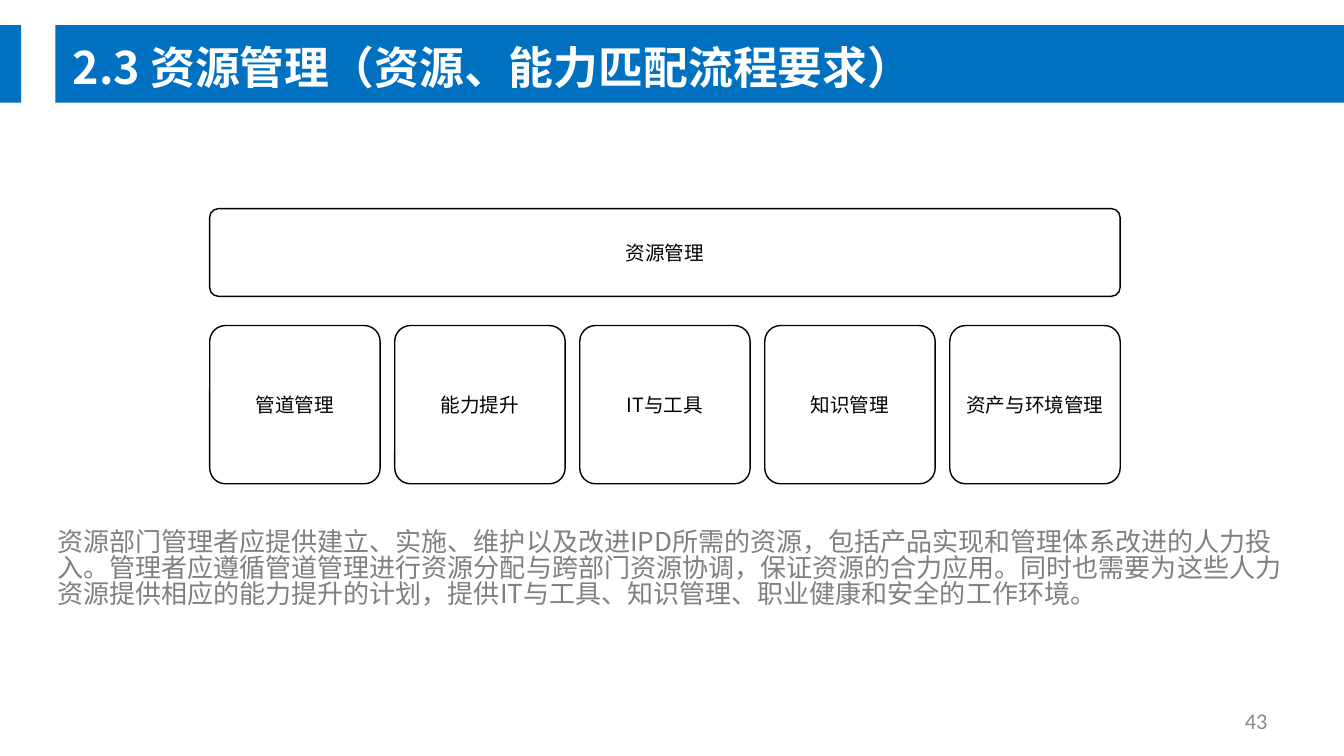
from dataclasses import dataclass

from lxml.etree import SubElement
from pptx import Presentation
from pptx.dml.color import RGBColor
from pptx.enum.shapes import MSO_SHAPE as Shape
from pptx.enum.text import MSO_ANCHOR as Anchor, MSO_AUTO_SIZE as AutoSize, PP_ALIGN as Align
from pptx.oxml.ns import qn
from pptx.util import Inches, Pt

TITLE = "2.3 资源管理（资源、能力匹配流程要求）"
MAIN_AREA = "资源管理"
SUB_AREAS = ["管道管理", "能力提升", "IT与工具", "知识管理", "资产与环境管理"]
DESCRIPTION = (
    "资源部门管理者应提供建立、实施、维护以及改进IPD所需的资源，包括产品实现和管理体系改进的人力投入。"
    "管理者应遵循管道管理进行资源分配与跨部门资源协调，保证资源的合力应用。"
    "同时也需要为这些人力资源提供相应的能力提升的计划，提供IT与工具、知识管理、职业健康和安全的工作环境。"
)
PAGE_NUMBER = "43"


@dataclass(frozen=True)
class Theme:
    font: str = "Noto Sans CJK SC"
    number_font: str = "Calibri"
    band: str = "0070C0"
    title: str = "FFFFFF"
    ink: str = "000000"
    description: str = "808080"
    number: str = "8C8C8C"
    title_size: float = 32
    description_size: float = 18.6
    number_size: float = 16
    box_size: float = 14


THEME = Theme()
SLIDE_WIDTH, SLIDE_HEIGHT = 13.33, 7.5
BAND_TOP, BAND_HEIGHT = 0.25, 0.77
BANDS = [(-0.03, 0.24), (0.55, 12.78)]
DIAGRAM_LEFT, DIAGRAM_WIDTH = 2.08, 9.03
MAIN_TOP, MAIN_HEIGHT = 2.07, 0.87
SUB_TOP, SUB_WIDTH, SUB_HEIGHT = 3.23, 1.69, 1.57


def write(shape, text, size, color, font=THEME.font, align=Align.LEFT,
          anchor=Anchor.MIDDLE, bold=False, spacing=1.0, margins=(0.1, 0.05)):
    frame = shape.text_frame
    frame.text = text
    frame.word_wrap = True
    frame.auto_size = AutoSize.NONE
    frame.vertical_anchor = anchor
    frame.margin_left = frame.margin_right = Inches(margins[0])
    frame.margin_top = frame.margin_bottom = Inches(margins[1])
    paragraph = frame.paragraphs[0]
    paragraph.alignment = align
    paragraph.line_spacing = spacing
    for run in paragraph.runs:
        run.font.size = Pt(size)
        run.font.bold = bold
        run.font.name = font
        run.font.color.rgb = RGBColor.from_string(color)
        east_asian = SubElement(run.font._element, qn("a:ea"))
        east_asian.set("typeface", font)


def add_band(slide, left, width):
    band = slide.shapes.add_shape(
        Shape.RECTANGLE, Inches(left), Inches(BAND_TOP), Inches(width), Inches(BAND_HEIGHT))
    band.shadow.inherit = False
    band.fill.solid()
    band.fill.fore_color.rgb = RGBColor.from_string(THEME.band)
    band.line.fill.background()


def add_title(slide):
    title = slide.shapes.title
    title.left, title.top = Inches(0.62), Inches(0.34)
    title.width, title.height = Inches(10.46), Inches(0.64)
    write(title, TITLE, THEME.title_size, THEME.title, bold=True)
    slide.shapes.element.append(title.element)


def add_area(slide, text, left, top, width, height):
    area = slide.shapes.add_shape(
        Shape.ROUNDED_RECTANGLE, Inches(left), Inches(top), Inches(width), Inches(height))
    area.adjustments[0] = 0.1
    area.shadow.inherit = False
    area.fill.background()
    area.line.color.rgb = RGBColor.from_string(THEME.ink)
    area.line.width = Pt(1)
    write(area, text, THEME.box_size, THEME.ink, align=Align.CENTER, margins=(0.06, 0.06))


def add_text(slide, text, left, top, width, height, **style):
    box = slide.shapes.add_textbox(Inches(left), Inches(top), Inches(width), Inches(height))
    write(box, text, **style)


def main():
    presentation = Presentation()
    presentation.slide_width = Inches(SLIDE_WIDTH)
    presentation.slide_height = Inches(SLIDE_HEIGHT)
    slide = presentation.slides.add_slide(presentation.slide_layouts.get_by_name("Title Only"))

    for left, width in BANDS:
        add_band(slide, left, width)
    add_title(slide)

    add_area(slide, MAIN_AREA, DIAGRAM_LEFT, MAIN_TOP, DIAGRAM_WIDTH, MAIN_HEIGHT)
    step = (DIAGRAM_WIDTH - SUB_WIDTH) / (len(SUB_AREAS) - 1)
    for index, text in enumerate(SUB_AREAS):
        add_area(slide, text, DIAGRAM_LEFT + index * step, SUB_TOP, SUB_WIDTH, SUB_HEIGHT)

    add_text(slide, DESCRIPTION, 0.47, 5.21, 12.45, 1.04, size=THEME.description_size,
             color=THEME.description, anchor=Anchor.TOP, spacing=0.84)
    add_text(slide, PAGE_NUMBER, 9.56, 6.95, 3.11, 0.4, size=THEME.number_size,
             color=THEME.number, font=THEME.number_font, align=Align.RIGHT)

    presentation.save("out.pptx")


if __name__ == "__main__":
    main()
